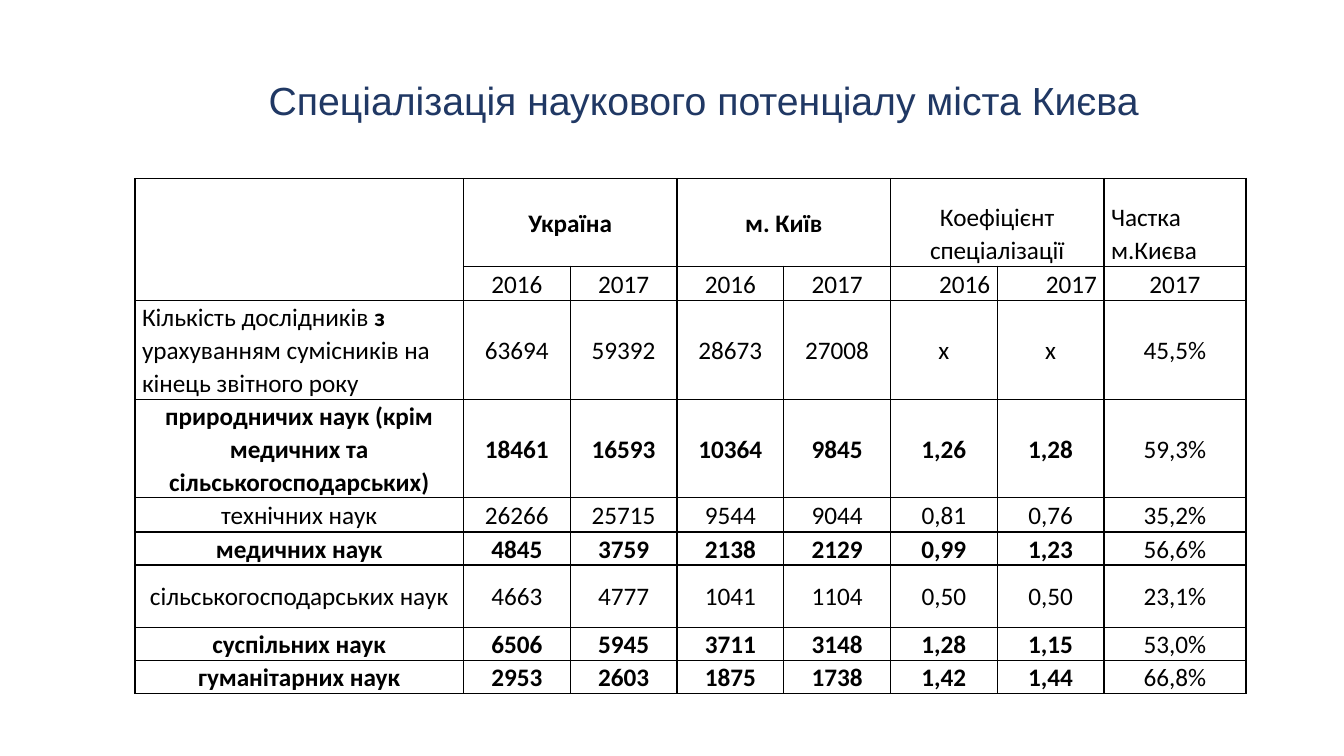
import lxml.etree
import pptx
import pptx.dml.color
import pptx.enum.text
import pptx.oxml.ns
import pptx.util

Cm = pptx.util.Cm
Pt = pptx.util.Pt
ALIGN = pptx.enum.text.PP_ALIGN
ANCHOR = pptx.enum.text.MSO_ANCHOR

BLACK = pptx.dml.color.RGBColor(0x00, 0x00, 0x00)
NAVY = pptx.dml.color.RGBColor(0x20, 0x38, 0x64)

COLUMN_WIDTHS = [8.28] + [2.69] * 6 + [3.58]
ROW_HEIGHTS = [2.21, 0.86, 2.41, 2.41, 0.86, 0.81, 1.57, 0.81, 0.81]
MERGES = [((0, 0), (1, 0)), ((0, 1), (0, 2)), ((0, 3), (0, 4)), ((0, 5), (0, 6))]
HEADER_ROWS = [
    ["", "Україна", "", "м. Київ", "", "Коефіцієнт спеціалізації", "", "Частка м.Києва"],
    ["", "2016", "2017", "2016", "2017", "2016", "2017", "2017"],
]
# Label, values, share of Kyiv, whether the row stands out in bold
SCIENCE_ROWS = [
    ("Кількість дослідників з урахуванням сумісників на кінець звітного року",
     "63694 59392 28673 27008 х х", "45,5%", False),
    ("природничих наук (крім медичних та сільськогосподарських)",
     "18461 16593 10364 9845 1,26 1,28", "59,3%", True),
    ("технічних наук", "26266 25715 9544 9044 0,81 0,76", "35,2%", False),
    ("медичних наук", "4845 3759 2138 2129 0,99 1,23", "56,6%", True),
    ("сільськогосподарських наук", "4663 4777 1041 1104 0,50 0,50", "23,1%", False),
    ("суспільних наук", "6506 5945 3711 3148 1,28 1,15", "53,0%", True),
    ("гуманітарних наук", "2953 2603 1875 1738 1,42 1,44", "66,8%", True),
]
BOLD_WORD = "з "


def set_attributes(target, values):
    for name, value in values.items():
        setattr(target, name, value)


def add_run(paragraph, text, size, color, font_name, bold=False):
    run = paragraph.add_run()
    run.text = text
    set_attributes(run.font, {"size": Pt(size), "name": font_name, "bold": bold})
    run.font.color.rgb = color


def format_title(title, text):
    set_attributes(title, {"left": Cm(5.13), "top": Cm(1.78),
                           "width": Cm(24.1), "height": Cm(1.45)})
    set_attributes(title.text_frame, {
        "margin_left": Cm(1.64), "word_wrap": False, "vertical_anchor": ANCHOR.MIDDLE,
        "auto_size": pptx.enum.text.MSO_AUTO_SIZE.NONE})
    paragraph = title.text_frame.paragraphs[0]
    paragraph.alignment = ALIGN.LEFT
    add_run(paragraph, text, 28, NAVY, "Arial")


def add_cell_borders(cell):
    properties = cell._tc.get_or_add_tcPr()
    qn = pptx.oxml.ns.qn
    for position, side in enumerate(("a:lnL", "a:lnR", "a:lnT", "a:lnB")):
        line = lxml.etree.Element(qn(side), w=str(Pt(1)))
        fill = lxml.etree.SubElement(line, qn("a:solidFill"))
        lxml.etree.SubElement(fill, qn("a:srgbClr"), val=str(BLACK))
        properties.insert(position, line)


def fill_cell(cell, runs, alignment=ALIGN.CENTER, anchor=ANCHOR.MIDDLE):
    """Write (text, bold) runs into a bordered cell without fill."""
    set_attributes(cell, {"margin_left": Cm(0.18), "margin_right": Cm(0.18),
                          "margin_top": 0, "margin_bottom": 0,
                          "vertical_anchor": anchor})
    cell.fill.background()
    add_cell_borders(cell)
    paragraph = cell.text_frame.paragraphs[0]
    set_attributes(paragraph, {"alignment": alignment, "line_spacing": 1.07})
    paragraph.font.size = Pt(18)
    for text, bold in runs:
        if text:
            add_run(paragraph, text, 18, BLACK, "Calibri", bold)


def fill_header(table):
    for row, texts in enumerate(HEADER_ROWS):
        for column, text in enumerate(texts):
            anchor = ANCHOR.BOTTOM if column >= 5 else ANCHOR.MIDDLE
            alignment = ALIGN.CENTER
            if (row, column) == (0, 7):
                alignment = ALIGN.LEFT
            elif row == 1 and column in (5, 6):
                alignment = ALIGN.RIGHT
            bold = row == 0 and column < 5
            fill_cell(table.cell(row, column), [(text, bold)], alignment, anchor)


def fill_science_rows(table):
    for row, (label, values, share, bold) in enumerate(SCIENCE_ROWS, len(HEADER_ROWS)):
        is_total = row == len(HEADER_ROWS)
        label_runs = [(label, bold)]
        if is_total:
            before, after = label.split(BOLD_WORD, 1)
            label_runs = [(before, False), (BOLD_WORD, True), (after, False)]
        fill_cell(table.cell(row, 0), label_runs, ALIGN.LEFT if is_total else ALIGN.CENTER)
        for column, value in enumerate(values.split(), 1):
            fill_cell(table.cell(row, column), [(value, bold)])
        fill_cell(table.cell(row, 7), [(share, False)])


def add_science_table(slide):
    frame = slide.shapes.add_table(
        len(ROW_HEIGHTS), len(COLUMN_WIDTHS), Cm(3.4), Cm(4.5),
        Cm(sum(COLUMN_WIDTHS)), Cm(sum(ROW_HEIGHTS)))
    table = frame.table
    set_attributes(table, {"first_row": False, "horz_banding": False})
    for column, width in zip(table.columns, COLUMN_WIDTHS):
        column.width = Cm(width)
    for row, height in zip(table.rows, ROW_HEIGHTS):
        row.height = Cm(height)
    fill_header(table)
    fill_science_rows(table)
    for first, last in MERGES:
        table.cell(*first).merge(table.cell(*last))


def main():
    presentation = pptx.Presentation()
    set_attributes(presentation, {"slide_width": Cm(33.87), "slide_height": Cm(19.05)})
    slide = presentation.slides.add_slide(presentation.slide_layouts.get_by_name("Title Only"))
    add_science_table(slide)
    format_title(slide.shapes.title, "Спеціалізація наукового потенціалу міста Києва")
    presentation.save("out.pptx")


if __name__ == "__main__":
    main()
